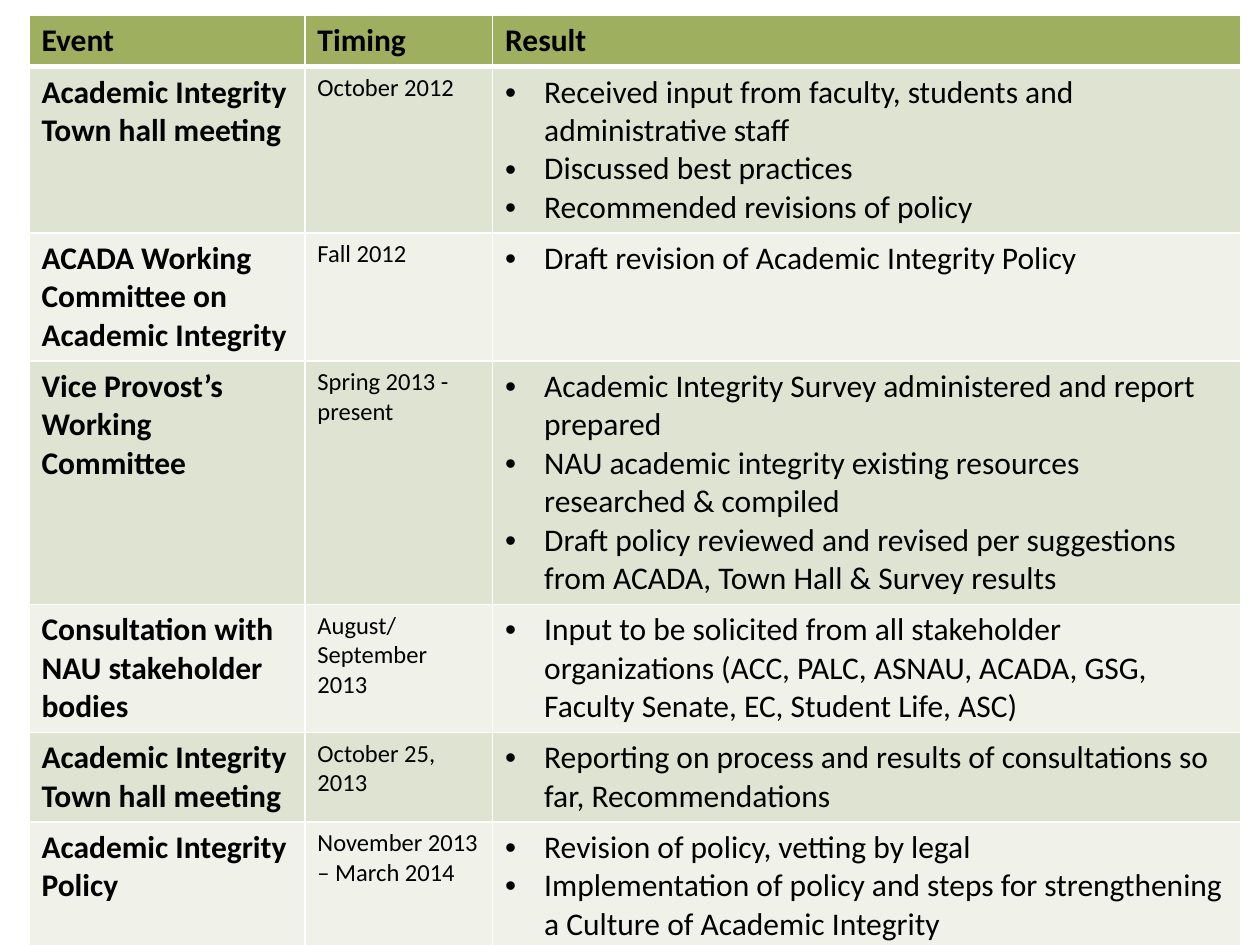
import pptx
import pptx.dml.color
import pptx.oxml
import pptx.oxml.ns
import pptx.util
from pptx.util import Inches

COLORS = {
    "header": "9EB060",
    "band": "DFE4D2",
    "plain": "F0F2EA",
    "border": "FFFFFF",
    "text": "000000",
}
HEADERS = ["Event", "Timing", "Result"]
EVENTS = [
    ("Academic Integrity Town hall meeting", "October 2012", [
        "Received input from faculty, students and administrative staff",
        "Discussed best practices",
        "Recommended revisions of policy"]),
    ("ACADA Working Committee on Academic Integrity", "Fall 2012", [
        "Draft revision of Academic Integrity Policy"]),
    ("Vice Provost’s Working Committee", "Spring 2013 - present", [
        "Academic Integrity Survey administered and report prepared",
        "NAU academic integrity existing resources researched & compiled",
        "Draft policy reviewed and revised per suggestions from ACADA, "
        "Town Hall & Survey results"]),
    ("Consultation with NAU stakeholder bodies", "August/September 2013", [
        "Input to be solicited from all stakeholder organizations (ACC, PALC, "
        "ASNAU, ACADA, GSG, Faculty Senate, EC, Student Life, ASC)"]),
    ("Academic Integrity Town hall meeting", "October 25, 2013", [
        "Reporting on process and results of consultations so far, Recommendations"]),
    ("Academic Integrity Policy", "November 2013 – March 2014", [
        "Revision of policy, vetting by legal",
        "Implementation of policy and steps for strengthening a Culture of "
        "Academic Integrity"]),
]


def fill_cell(cell, lines, fill, size=18, bold=False, bulleted=False, bottom_width=1):
    cell.fill.solid()
    cell.fill.fore_color.rgb = pptx.dml.color.RGBColor.from_string(COLORS[fill])
    properties = cell._tc.get_or_add_tcPr()
    widths = {"lnL": 1, "lnR": 1, "lnT": 1, "lnB": bottom_width}
    for position, (side, width) in enumerate(widths.items()):
        properties.insert(position, pptx.oxml.parse_xml(
            f'<a:{side} {pptx.oxml.ns.nsdecls("a")} w="{pptx.util.Pt(width)}">'
            f'<a:solidFill><a:srgbClr val="{COLORS["border"]}"/></a:solidFill></a:{side}>'))
    cell.text_frame.text = "\n".join(lines)
    for paragraph in cell.text_frame.paragraphs:
        paragraph.font.name = "Calibri"
        paragraph.font.size = pptx.util.Pt(size)
        paragraph.font.bold = bold
        paragraph.font.color.rgb = pptx.dml.color.RGBColor.from_string(COLORS["text"])
        if bulleted:
            paragraph_properties = paragraph._p.get_or_add_pPr()
            paragraph_properties.set("marL", str(Inches(0.31)))
            paragraph_properties.set("indent", str(-Inches(0.31)))
            bullet_markup = (
                f'<a:buFont {pptx.oxml.ns.nsdecls("a")} typeface="Arial"/>',
                f'<a:buChar {pptx.oxml.ns.nsdecls("a")} char="•"/>')
            for position, markup in enumerate(bullet_markup):
                paragraph_properties.insert(position, pptx.oxml.parse_xml(markup))


presentation = pptx.Presentation()
presentation.slide_width = Inches(10)
presentation.slide_height = Inches(7.5)
slide = presentation.slides.add_slide(presentation.slide_layouts[6])

table_frame = slide.shapes.add_table(
    len(EVENTS) + 1, len(HEADERS), Inches(0.23), Inches(0.12), Inches(9.62), Inches(7.31))
table = table_frame.table
for column, width in zip(table.columns, (2.19, 1.49, 5.94)):
    column.width = Inches(width)
for row in table.rows:
    row.height = Inches(0.41)
table_frame.height = Inches(7.31)

for cell, header in zip(table.rows[0].cells, HEADERS):
    fill_cell(cell, [header], "header", bold=True, bottom_width=3)
for index, (event, timing, results) in enumerate(EVENTS, start=1):
    fill = "band" if index % 2 else "plain"
    event_cell, timing_cell, result_cell = table.rows[index].cells
    fill_cell(event_cell, [event], fill, bold=True)
    fill_cell(timing_cell, [timing], fill, size=14)
    fill_cell(result_cell, results, fill, bulleted=True)

presentation.save("out.pptx")
